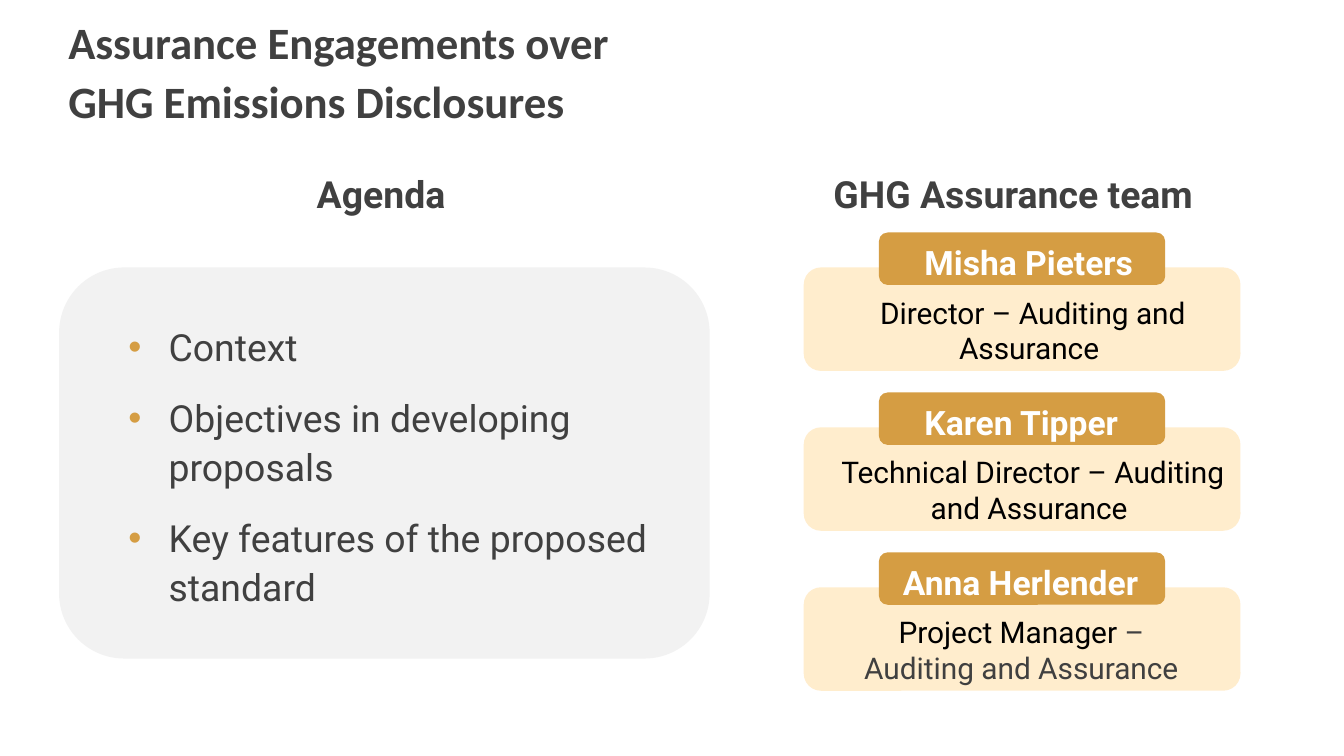
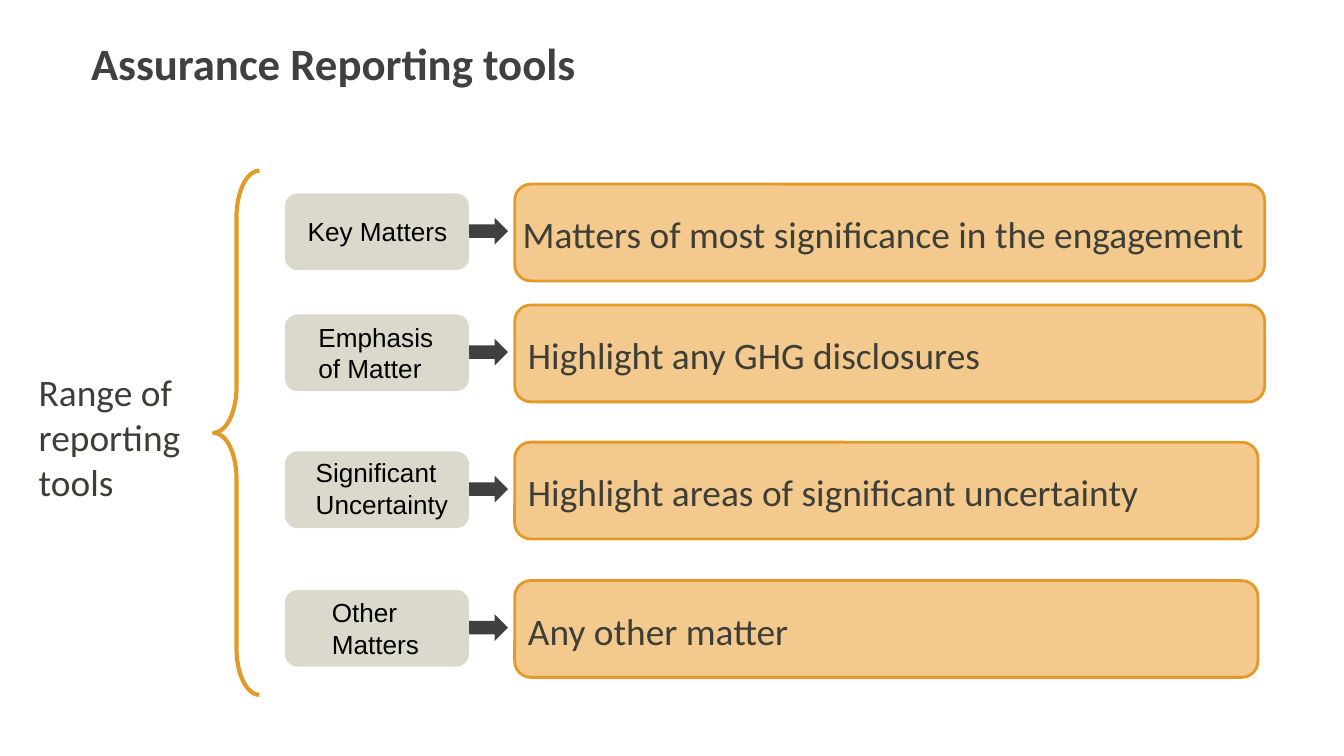
from dataclasses import dataclass

from lxml import etree
from pptx import Presentation
from pptx.dml.color import RGBColor
from pptx.enum.shapes import MSO_SHAPE
from pptx.enum.text import MSO_ANCHOR, PP_ALIGN
from pptx.oxml.ns import qn
from pptx.util import Inches, Pt

ROUNDED = MSO_SHAPE.ROUNDED_RECTANGLE
ARROW = MSO_SHAPE.RIGHT_ARROW
BRACE = MSO_SHAPE.RIGHT_BRACE
LEFT, CENTER = PP_ALIGN.LEFT, PP_ALIGN.CENTER
TOP, MIDDLE = MSO_ANCHOR.TOP, MSO_ANCHOR.MIDDLE


@dataclass(frozen=True)
class Style:
    size: int
    font: str
    color: str
    bold: bool = False


class Theme:
    charcoal = "404040"
    gold = "D59D43"
    cream = "FFEDCD"
    panel = "F2F2F2"
    amber_fill = "F3C98D"
    amber_line = "E29B29"
    stone = "DBD8CC"
    bullet_font = "Arial"
    title = Style(24, "Calibri", charcoal, True)
    heading = Style(20, "Roboto", charcoal, True)
    agenda = Style(20, "Roboto", charcoal)
    name = Style(18, "Roboto", "FFFFFF", True)
    role = Style(16, "Roboto", "000000")
    role_soft = Style(16, "Roboto", charcoal)
    label = Style(14, "Arial", "000000")
    caption = Style(20, "Calibri", "3D3F37")


@dataclass(frozen=True)
class TeamMember:
    name: str
    name_left: float
    role: tuple
    role_left: float
    role_width: float


@dataclass(frozen=True)
class Tool:
    top: float
    label: str
    label_left: float
    label_top: float
    caption: str
    caption_left: float
    bar_width: float


AGENDA = [
    "Context",
    "Objectives in developing proposals",
    "Key features of the proposed standard",
]
TEAM = [
    TeamMember("Misha Pieters", 0.8,
               (("Director – Auditing and Assurance ", Theme.role),), 0.08, 3.25),
    TeamMember("Karen Tipper", 0.8,
               (("Technical Director – Auditing and Assurance ", Theme.role),), 0.08, 3.25),
    TeamMember("Anna Herlender", 0.64,
               (("Project Manager", Theme.role),
                (" – Auditing and Assurance", Theme.role_soft)), 0.19, 2.86),
]
TOOLS = [
    Tool(1.37, "Key Matters", 0.07, 0.18,
         "Matters of most significance in the engagement", 1.67, 5.58),
    Tool(2.27, "Emphasis of Matter", 0.15, 0.07,
         "Highlight any GHG disclosures", 1.71, 5.58),
    Tool(3.29, "Significant Uncertainty", 0.13, 0.06,
         "Highlight areas of significant uncertainty", 1.71, 5.53),
    Tool(4.32, "Other Matters", 0.25, 0.07,
         "Any other matter", 1.71, 5.53),
]


def add_figure(shapes, kind, box, fill=None, line=None, line_width=1.5):
    figure = shapes.add_shape(kind, *map(Inches, box))
    figure.shadow.inherit = False
    if fill:
        figure.fill.solid()
        figure.fill.fore_color.rgb = RGBColor.from_string(fill)
    else:
        figure.fill.background()
    if line:
        figure.line.color.rgb = RGBColor.from_string(line)
        figure.line.width = Pt(line_width)
    else:
        figure.line.fill.background()
    return figure


def add_span(para, text, style):
    span = para.add_run()
    span.text = text
    span.font.size = Pt(style.size)
    span.font.name = style.font
    span.font.bold = style.bold
    span.font.color.rgb = RGBColor.from_string(style.color)


def add_text(shapes, box, spans, align=LEFT, spacing=1.0, after=0):
    """Add a one-paragraph text box from (text, style) pairs."""
    frame = shapes.add_textbox(*map(Inches, box)).text_frame
    frame.word_wrap = True
    frame.vertical_anchor = TOP
    para = frame.paragraphs[0]
    para.alignment = align
    para.line_spacing = spacing
    para.space_after = Pt(after)
    for text, style in spans:
        add_span(para, text, style)


def add_bullet(para, color, indent):
    properties = para._p.get_or_add_pPr()
    properties.set("marL", str(Inches(indent)))
    properties.set("indent", str(-Inches(indent)))
    bullet_color = etree.SubElement(properties, qn("a:buClr"))
    etree.SubElement(bullet_color, qn("a:srgbClr"), val=color)
    etree.SubElement(properties, qn("a:buFont"), typeface=Theme.bullet_font)
    etree.SubElement(properties, qn("a:buChar"), char="•")


def add_title(page, box, text, spacing=1.0):
    add_text(page.shapes, box, [(text, Theme.title)], spacing=spacing, after=3)


def add_heading(page, left, text):
    add_text(page.shapes, (left, 1.19, 3.56, 0.39), [(text, Theme.heading)],
             CENTER, 1.1, 10)


def add_agenda(page, left, top):
    add_figure(page.shapes, ROUNDED, (left, top, 4.84, 2.91), Theme.panel)
    listing = add_figure(page.shapes, ROUNDED, (left + 0.29, top + 0.21, 4.63, 2.6))
    frame = listing.text_frame
    frame.word_wrap = True
    frame.vertical_anchor = MIDDLE
    frame.margin_bottom = Inches(0.14)
    for index, item in enumerate(AGENDA):
        para = frame.add_paragraph() if index else frame.paragraphs[0]
        add_bullet(para, Theme.gold, 0.3)
        para.alignment = LEFT
        para.line_spacing = 1.1
        para.space_before = Pt(1.5 if index else 0)
        para.space_after = Pt(10)
        add_span(para, item, Theme.agenda)


def add_team_card(page, left, top, member):
    card = page.shapes.add_group_shape().shapes
    add_figure(card, ROUNDED, (left, top + 0.26, 3.25, 0.77), Theme.cream)
    add_figure(card, ROUNDED, (left + 0.56, top, 2.13, 0.39), Theme.gold)
    add_text(card, (left + member.name_left, top - 0.01, 2.08, 0.39),
             [(member.name, Theme.name)], spacing=1.1, after=10)
    add_text(card, (left + member.role_left, top + 0.41, member.role_width, 0.64),
             member.role, CENTER, after=10)


def add_tool_row(page, left, tool):
    shapes, top = page.shapes, tool.top
    add_figure(shapes, ARROW, (left + 1.33, top + 0.25, 0.33, 0.2), Theme.charcoal)
    add_figure(shapes, ROUNDED, (left + 1.71, top, tool.bar_width, 0.72),
               Theme.amber_fill, Theme.amber_line)
    add_text(shapes, (left + tool.caption_left, top + 0.12, 5.62, 0.5),
             [(tool.caption, Theme.caption)], spacing=1.1, after=3)
    add_figure(shapes, ROUNDED, (left, top + 0.07, 1.37, 0.57), Theme.stone)
    add_text(shapes, (left + tool.label_left, top + tool.label_top, 1.25, 0.57),
             [(tool.label, Theme.label)])


def add_range_brace(page, left, top):
    add_text(page.shapes, (left, top + 1.43, 1.46, 0.78),
             [("Range of reporting tools", Theme.caption)])
    brace = add_figure(page.shapes, BRACE, (left + 1.4, top, 0.34, 3.9),
                       line=Theme.amber_line, line_width=2.25)
    brace.adjustments[0] = 1.01
    brace.rotation = 180


def build_agenda_page(page):
    add_title(page, (0.41, 0.02, 4.74, 0.64),
              "Assurance Engagements over GHG Emissions Disclosures", 1.1)
    add_heading(page, 1.09, "Agenda ")
    add_agenda(page, 0.44, 1.99)
    add_heading(page, 5.76, "GHG Assurance team")
    for index, member in enumerate(TEAM):
        add_team_card(page, 5.98, 1.73 + 1.19 * index, member)


def build_tools_page(page):
    add_title(page, (0.58, 0.22, 4.64, 0.53), "Assurance Reporting tools")
    add_range_brace(page, 0.19, 1.27)
    for tool in TOOLS:
        add_tool_row(page, 2.12, tool)


def main():
    deck = Presentation()
    deck.slide_width = Inches(10)
    deck.slide_height = deck.slide_width * 9 // 16
    blank = deck.slide_layouts[6]
    for build in (build_agenda_page, build_tools_page):
        build(deck.slides.add_slide(blank))
    deck.save("out.pptx")


if __name__ == "__main__":
    main()
